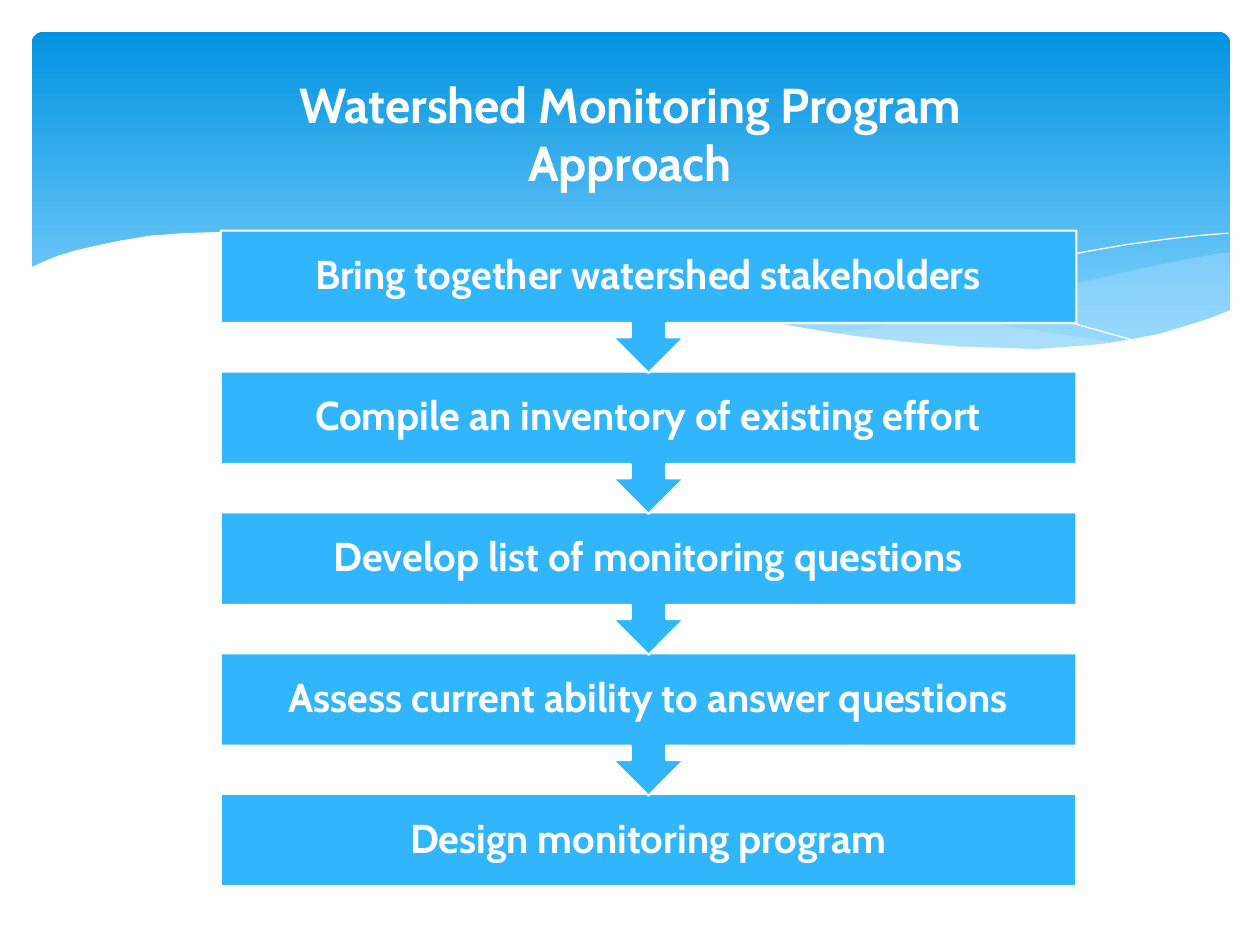
from pptx import Presentation
from pptx.dml.color import RGBColor
from pptx.enum.shapes import MSO_SHAPE
from pptx.enum.text import MSO_ANCHOR, PP_ALIGN
from pptx.oxml.xmlchemy import OxmlElement
from pptx.util import Cm, Pt

FONT = "Cabin"
WHITE = "FFFFFF"
BLUE = "31B6FD"
PALE = "C6E7FC"
WAVE_UNIT = Cm(0.0254)

RIGHT_SWELL = [
    (976, 200), (962, 202), (935, 207), (906, 213), (876, 220), (832, 230), (779, 242),
    (729, 253), (683, 262), (661, 265), (691, 269), (719, 272), (745, 275), (769, 277),
    (803, 278), (835, 277), (863, 275), (889, 272), (913, 267), (935, 262), (949, 257),
    (963, 252), (976, 247),
]
LONG_SWELL = [
    (893, 273), (866, 269), (807, 260), (741, 247), (668, 231), (598, 214), (555, 205),
    (514, 198), (465, 191), (420, 187), (380, 185), (344, 186), (313, 188), (286, 191),
    (323, 196), (362, 203), (404, 211), (449, 222), (530, 240), (601, 255), (650, 264),
    (695, 270), (736, 275), (773, 277), (807, 278), (838, 278), (867, 276), (893, 273),
]
LONG_CREST = [
    (309, 195), (328, 192), (353, 189), (387, 187), (416, 187), (450, 188), (489, 190),
    (533, 194), (582, 200), (636, 208), (695, 219), (760, 233), (831, 251), (907, 272),
]
RIGHT_CREST = [
    (613, 257), (653, 246), (695, 235), (748, 223), (806, 210), (866, 199), (895, 194),
    (924, 190), (951, 187), (975, 185),
]
WHITE_BASE = [
    (977, 246), (959, 253), (940, 259), (920, 265), (899, 269), (875, 273), (850, 275),
    (823, 277), (793, 276), (761, 275), (726, 272), (688, 268), (648, 262), (603, 254),
    (555, 245), (503, 233), (447, 220), (391, 207), (340, 197), (292, 190), (250, 186),
    (211, 184), (177, 184), (146, 185), (119, 187), (95, 191), (76, 195), (59, 199),
    (46, 203), (36, 207), (23, 213), (23, 329), (977, 329),
]
STEPS = [
    "Bring together watershed stakeholders",
    "Compile an inventory of existing effort",
    "Develop list of monitoring questions",
    "Assess current ability to answer questions",
    "Design monitoring program",
]


def rgb(value):
    return RGBColor.from_string(value)


class Deck:
    def __init__(self, prs):
        self.s = prs.slides.add_slide(prs.slide_layouts[6])

    def banner(self, x, y, w, h):
        sp = self.s.shapes.add_shape(
            MSO_SHAPE.ROUNDED_RECTANGLE, Cm(x), Cm(y), Cm(w), Cm(h))
        sp.shadow.inherit = False
        sp.adjustments[0] = 0.034
        sp.line.fill.background()
        sp.fill.gradient()
        sp.fill.gradient_angle = 270
        for stop, position, color in zip(
                sp.fill.gradient_stops, (0, 0.9), ("0293E0", "83D3FE")):
            stop.position = position
            stop.color.rgb = rgb(color)

    def outline(self, points, close):
        builder = self.s.shapes.build_freeform(*points[0], scale=WAVE_UNIT)
        builder.add_line_segments(points[1:], close=close)
        sp = builder.convert_to_shape()
        sp.shadow.inherit = False
        return sp

    def wave(self, points, color, opacity=100):
        sp = self.outline(points, True)
        sp.line.fill.background()
        sp.fill.solid()
        sp.fill.fore_color.rgb = rgb(color)
        if opacity < 100:
            alpha = OxmlElement("a:alpha")
            alpha.set("val", str(opacity * 1000))
            sp.fill._xPr.solidFill.srgbClr.append(alpha)

    def crest(self, points):
        sp = self.outline(points, False)
        sp.fill.background()
        sp.line.color.rgb = rgb(WHITE)
        sp.line.width = Pt(0)

    def add_text(self, tf, lines, size):
        tf.word_wrap = True
        tf.vertical_anchor = MSO_ANCHOR.MIDDLE
        p = tf.paragraphs[0]
        p.alignment = PP_ALIGN.CENTER
        for i, line in enumerate(lines):
            if i:
                p.add_line_break()
            r = p.add_run()
            r.text = line
            r.font.name = FONT
            r.font.size = Pt(size)
            r.font.bold = True
            r.font.color.rgb = rgb(WHITE)
        return p

    def title(self, lines, x, y, w, h):
        sp = self.s.shapes.add_textbox(Cm(x), Cm(y), Cm(w), Cm(h))
        self.add_text(sp.text_frame, lines, 28)

    def step(self, kind, text, x, y, w, h):
        sp = self.s.shapes.add_shape(kind, Cm(x), Cm(y), Cm(w), Cm(h))
        sp.shadow.inherit = False
        sp.fill.solid()
        sp.fill.fore_color.rgb = rgb(BLUE)
        sp.line.color.rgb = rgb(WHITE)
        sp.line.width = Pt(1.25)
        tf = sp.text_frame
        tf.margin_left = tf.margin_right = Cm(0.46)
        tf.margin_top = tf.margin_bottom = Cm(0.46)
        self.add_text(tf, [text], 23).line_spacing = 0.9


def main():
    prs = Presentation()
    prs.slide_width, prs.slide_height = Cm(25.4), Cm(19.05)
    deck = Deck(prs)

    deck.banner(0.64, 0.64, 24.16, 6.86)
    deck.wave(RIGHT_SWELL, PALE, 29)
    deck.wave(LONG_SWELL, PALE, 40)
    deck.crest(LONG_CREST)
    deck.crest(RIGHT_CREST)
    deck.wave(WHITE_BASE, WHITE)

    last = len(STEPS) - 1
    for i in range(last, -1, -1):
        kind, height = MSO_SHAPE.DOWN_ARROW_CALLOUT, 2.87
        if i == last:
            kind, height = MSO_SHAPE.RECTANGLE, 1.85
        deck.step(kind, STEPS[i], 4.45, 4.65 + 2.84 * i, 17.25, height)

    deck.title(["Watershed Monitoring Program", "Approach"], 1.27, 0.94, 22.86, 3.48)
    prs.save("out.pptx")


if __name__ == "__main__":
    main()
